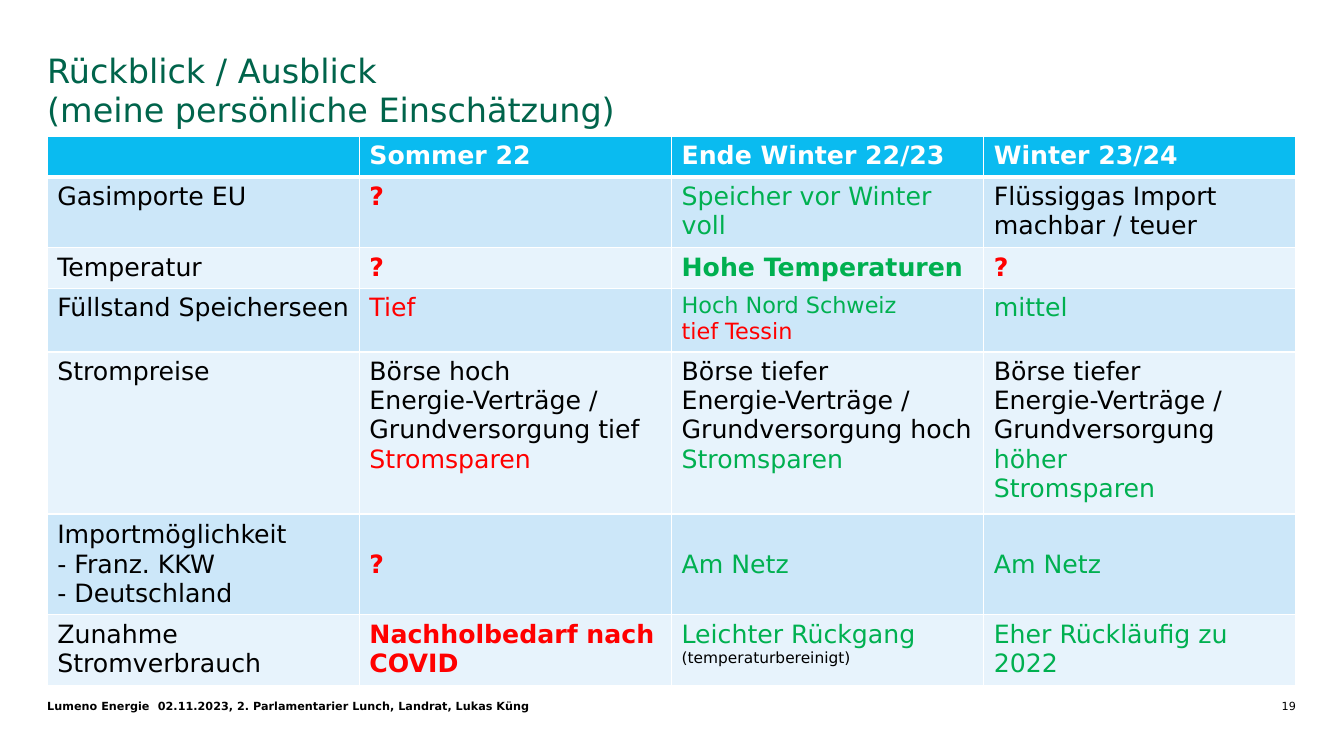
import pptx
import pptx.dml.color
import pptx.enum.text
import pptx.oxml
import pptx.oxml.ns
import pptx.util

Cm, Pt = pptx.util.Cm, pptx.util.Pt
ALIGN = pptx.enum.text.PP_ALIGN
ANCHOR = pptx.enum.text.MSO_ANCHOR

# Content
FONT = "DejaVu Sans"
COLORS = {"title": "00644B", "header": "0ABBF0", "odd": "CCE7F9", "even": "E7F3FC",
          "black": "000000", "white": "FFFFFF", "red": "FF0000", "green": "00B050"}
TITLE = ["Rückblick / Ausblick", "(meine persönliche Einschätzung)"]

# Run styles: colour, bold, size
STYLES = {
    "head": ("white", True, 18),
    "text": ("black", False, 18),
    "note": ("black", False, 11),
    "bad": ("red", False, 18),
    "bad bold": ("red", True, 18),
    "bad small": ("red", False, 16),
    "good": ("green", False, 18),
    "good bold": ("green", True, 18),
    "good small": ("green", False, 16),
}

# Each cell is a list of paragraphs, each paragraph a list of (text, style) runs
UNKNOWN = [[("?", "bad bold")]]
ON_GRID = [[("Am Netz", "good")]]
ROWS = [
    [[], [[("Sommer 22", "head")]], [[("Ende Winter 22/23", "head")]],
     [[("Winter 23/24", "head")]]],
    [[[("Gasimporte EU", "text")]], UNKNOWN, [[("Speicher vor Winter voll", "good")]],
     [[("Flüssiggas Import machbar / teuer", "text")]]],
    [[[("Temperatur", "text")]], UNKNOWN, [[("Hohe Temperaturen", "good bold")]], UNKNOWN],
    [[[("Füllstand Speicherseen", "text")]], [[("Tief", "bad")]],
     [[("Hoch Nord Schweiz", "good small")], [("tief Tessin", "bad small")]],
     [[("mittel", "good")]]],
    [[[("Strompreise", "text")]],
     [[("Börse hoch", "text")], [("Energie-Verträge / Grundversorgung tief", "text")],
      [("Stromsparen", "bad")]],
     [[("Börse tiefer", "text")], [("Energie-Verträge / Grundversorgung hoch", "text")],
      [("Stromsparen", "good")]],
     [[("Börse tiefer", "text")],
      [("Energie-Verträge / Grundversorgung ", "text"), ("höher", "good")],
      [("Stromsparen", "good")]]],
    [[[("Importmöglichkeit", "text")], [("- Franz. KKW", "text")], [("- Deutschland", "text")]],
     UNKNOWN, ON_GRID, ON_GRID],
    [[[("Zunahme Stromverbrauch", "text")]], [[("Nachholbedarf nach COVID", "bad bold")]],
     [[("Leichter Rückgang ", "good"), ("(temperaturbereinigt)", "note")]],
     [[("Eher Rückläufig zu 2022", "good")]]],
]
ROW_HEIGHTS = [1.02, 1.78, 1.02, 1.61, 4.08, 2.54, 1.78]
IMPORT_ROW = 5

# Footer: text, left, width, bold, alignment
FOOTER = [
    ("Lumeno Energie", 1.19, 2.7, True, ALIGN.LEFT),
    ("02.11.2023, 2. Parlamentarier Lunch, Landrat, Lukas Küng", 3.98, 21.8, True, ALIGN.LEFT),
    ("19", 30.4, 2.26, False, ALIGN.RIGHT),
]

LEFT, WIDTH = 1.19, 31.47
TITLE_TOP, TABLE_TOP, FOOTER_TOP = 1.3, 3.43, 17.53


def rgb(name):
    return pptx.dml.color.RGBColor.from_string(COLORS[name])


def add_run(p, text, color, bold, size):
    r = p.add_run()
    r.text = text
    r.font.name, r.font.size, r.font.bold = FONT, Pt(size), bold
    r.font.color.rgb = rgb(color)


def clear_margins(tf):
    tf.margin_left = tf.margin_top = tf.margin_right = tf.margin_bottom = 0
    tf.word_wrap = True
    tf.vertical_anchor = ANCHOR.TOP


def add_borders(cell, row):
    tc_pr = cell._tc.get_or_add_tcPr()
    widths = {"lnL": 1, "lnR": 1, "lnT": 3 if row == 1 else 1, "lnB": 3 if row == 0 else 1}
    for i, (tag, width) in enumerate(widths.items()):
        tc_pr.insert(i, pptx.oxml.parse_xml(
            f'<a:{tag} {pptx.oxml.ns.nsdecls("a")} w="{Pt(width)}"><a:solidFill>'
            f'<a:srgbClr val="{COLORS["white"]}"/></a:solidFill></a:{tag}>'))


def add_title(s):
    sp = s.shapes.title
    sp.left, sp.top, sp.width, sp.height = Cm(LEFT), Cm(TITLE_TOP), Cm(WIDTH), Cm(3.18)
    tf = sp.text_frame
    clear_margins(tf)
    tf.auto_size = pptx.enum.text.MSO_AUTO_SIZE.NONE
    p = tf.paragraphs[0]
    p.alignment, p.line_spacing = ALIGN.LEFT, Pt(27.9)
    for i, line in enumerate(TITLE):
        if i:
            p.add_line_break()
        add_run(p, line, "title", False, 23.9)


def add_review_table(s):
    columns = len(ROWS[0])
    table = s.shapes.add_table(len(ROWS), columns, Cm(LEFT), Cm(TABLE_TOP),
                               Cm(WIDTH), Cm(sum(ROW_HEIGHTS))).table
    for column in table.columns:
        column.width = Cm(WIDTH / columns)
    for i, (row, height) in enumerate(zip(ROWS, ROW_HEIGHTS)):
        table.rows[i].height = Cm(height)
        fill = "header" if i == 0 else "odd" if i % 2 else "even"
        for j, paragraphs in enumerate(row):
            cell = table.cell(i, j)
            cell.fill.solid()
            cell.fill.fore_color.rgb = rgb(fill)
            cell.vertical_anchor = ANCHOR.MIDDLE if i == IMPORT_ROW else ANCHOR.TOP
            add_borders(cell, i)
            tf = cell.text_frame
            for k, runs in enumerate(paragraphs):
                p = tf.add_paragraph() if k else tf.paragraphs[0]
                for text, style in runs:
                    add_run(p, text, *STYLES[style])


def add_footer(s):
    for text, left, width, bold, alignment in FOOTER:
        sp = s.shapes.add_textbox(Cm(left), Cm(FOOTER_TOP), Cm(width), Cm(0.42))
        clear_margins(sp.text_frame)
        p = sp.text_frame.paragraphs[0]
        p.alignment, p.line_spacing = alignment, Pt(11.9)
        add_run(p, text, "black", bold, 8)


def main():
    prs = pptx.Presentation()
    prs.slide_width, prs.slide_height = Cm(33.87), Cm(19.05)
    s = prs.slides.add_slide(prs.slide_layouts.get_by_name("Title Only"))
    add_title(s)
    add_review_table(s)
    add_footer(s)
    prs.save("out.pptx")


if __name__ == "__main__":
    main()
